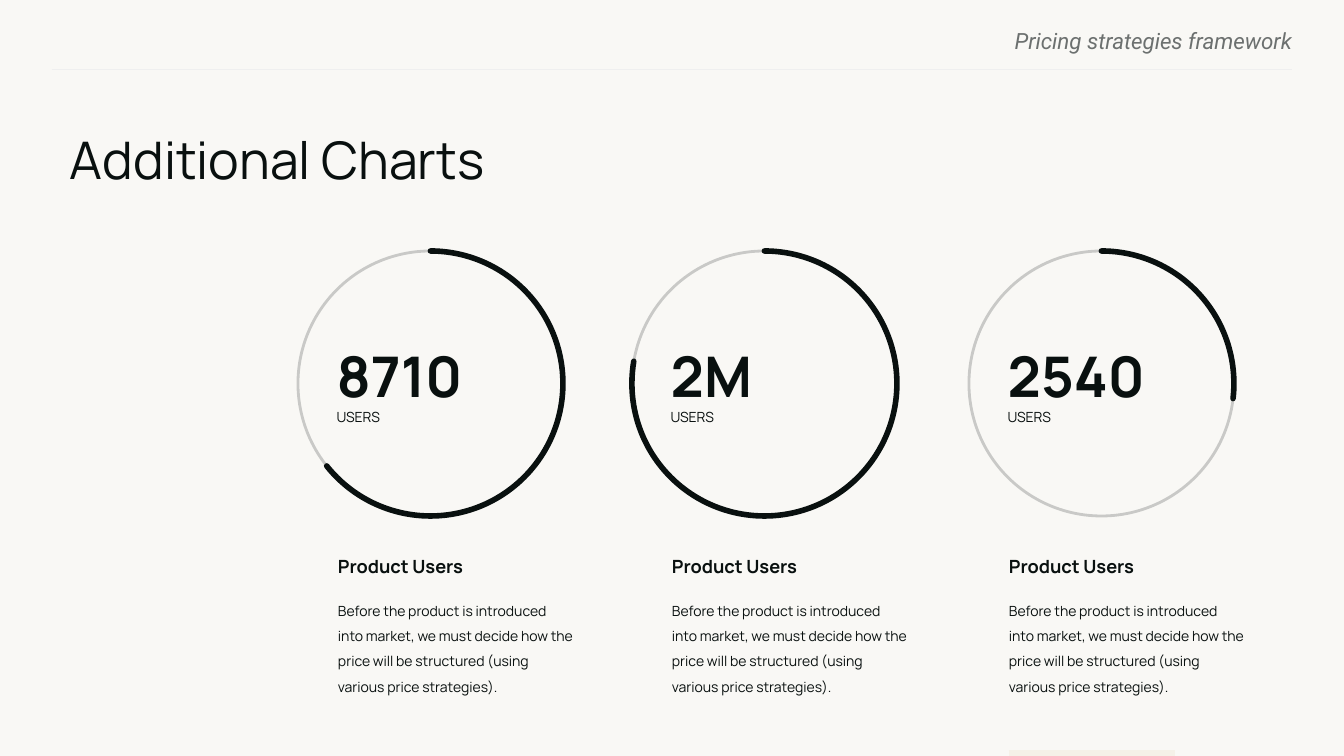
from dataclasses import dataclass

from lxml.etree import SubElement
from pptx import Presentation
from pptx.dml.color import RGBColor
from pptx.enum.shapes import MSO_CONNECTOR, MSO_SHAPE
from pptx.enum.text import MSO_ANCHOR, PP_ALIGN
from pptx.oxml.ns import qn
from pptx.util import Emu, Pt

SLIDE_W, SLIDE_H = 1344, 756
EMU_PER_PX = 12192000 / SLIDE_W

PAPER, INK, GREY = "F9F8F5", "09100F", "6C706F"
RULE, FOOT_MARK = "EFEFEF", "F5F1E8"

RING_TOP, RING_SIZE = 251, 265
CAPTION_INDENT, CAPTION_TOP, CAPTION_W, CAPTION_H = 40, 546, 236, 147
ARC_START = 270
INSET_Y = 5
CAPTION_TITLE = "Product Users"
CAPTION_BODY = (
    "Before the product is introduced into market, we must decide how the "
    "price will be structured (using various price strategies)."
)


@dataclass(frozen=True)
class Gauge:
    left: int
    figure: str
    arc_end: float  # degrees, clockwise from three o'clock


@dataclass(frozen=True)
class Line:
    text: str
    size: int
    bold: bool = False
    italic: bool = False
    font: str = "Manrope"
    color: str = INK
    align: PP_ALIGN = PP_ALIGN.LEFT
    spacing: float = 1.0
    before: int = 0


GAUGES = [
    Gauge(298, "8710", 141.52),
    Gauge(632, "2M", 189.65),
    Gauge(969, "2540", 6.54),
]


def px(length: int) -> Emu:
    return Emu(round(length * EMU_PER_PX))


def rgb(color: str) -> RGBColor:
    return RGBColor.from_string(color)


def write(frame, lines: list[Line], inset_x: int = 0, inset_y: int = INSET_Y) -> None:
    frame.word_wrap = True
    frame.margin_left = frame.margin_right = px(inset_x)
    frame.margin_top = frame.margin_bottom = px(inset_y)
    frame.text = "\n".join(line.text for line in lines)
    for paragraph, line in zip(frame.paragraphs, lines):
        paragraph.alignment = line.align
        paragraph.line_spacing = line.spacing
        paragraph.space_before = Pt(line.before)
        font = paragraph.runs[0].font
        font.name, font.size = line.font, Pt(line.size)
        font.bold, font.italic = line.bold, line.italic
        font.color.rgb = rgb(line.color)


def add_text(slide, left: int, top: int, width: int, height: int,
             lines: list[Line], inset_x: int = 0, inset_y: int = INSET_Y) -> None:
    box = slide.shapes.add_textbox(px(left), px(top), px(width), px(height))
    write(box.text_frame, lines, inset_x, inset_y)


def add_rule(slide, left: int, right: int, y: int, color: str, weight: float) -> None:
    rule = slide.shapes.add_connector(
        MSO_CONNECTOR.STRAIGHT, px(left), px(y), px(right), px(y))
    rule.line.color.rgb = rgb(color)
    rule.line.width = Pt(weight)
    SubElement(rule._element.spPr, qn("a:effectLst"))


def add_outline(slide, kind: MSO_SHAPE, left: int, weight: int):
    outline = slide.shapes.add_shape(
        kind, px(left), px(RING_TOP), px(RING_SIZE), px(RING_SIZE))
    outline.shadow.inherit = False
    outline.fill.background()
    outline.line.color.rgb = rgb(INK)
    outline.line.width = Pt(weight)
    return outline


def add_gauge(slide, gauge: Gauge) -> None:
    # Pale full ring holding the figure
    ring = add_outline(slide, MSO_SHAPE.OVAL, gauge.left, 2)
    ring_color = ring.line._ln.find(f".//{qn('a:srgbClr')}")
    SubElement(ring_color, qn("a:alpha"), val="20000")
    ring.text_frame.vertical_anchor = MSO_ANCHOR.MIDDLE
    write(ring.text_frame, [Line(gauge.figure, 40, bold=True), Line("USERS", 10)])

    # Progress arc with round ends; adjustments count 0.6 per degree
    arc = add_outline(slide, MSO_SHAPE.ARC, gauge.left, 4)
    arc.adjustments[0] = ARC_START * 0.6
    arc.adjustments[1] = gauge.arc_end * 0.6
    arc.line._ln.set("cap", "rnd")

    # Caption below
    add_text(slide, gauge.left + CAPTION_INDENT, CAPTION_TOP, CAPTION_W, CAPTION_H, [
        Line(CAPTION_TITLE, 13, bold=True, spacing=1.2),
        Line(CAPTION_BODY, 10, spacing=1.5, before=12),
    ])


def main() -> None:
    deck = Presentation()
    deck.slide_width, deck.slide_height = px(SLIDE_W), px(SLIDE_H)
    slide = deck.slides.add_slide(deck.slide_layouts[6])
    slide.background.fill.solid()
    slide.background.fill.fore_color.rgb = rgb(PAPER)

    # Header
    add_text(slide, 774, 27, 518, 24, [
        Line("Pricing strategies framework", 16, italic=True, font="Roboto",
             color=GREY, align=PP_ALIGN.RIGHT),
    ], inset_y=0)
    add_rule(slide, 52, 1292, 70, RULE, 0.75)

    # Title
    add_text(slide, 60, 123, 1240, 69, [Line("Additional Charts", 37)], inset_x=10)

    # Gauges
    for gauge in GAUGES:
        add_gauge(slide, gauge)

    # Mark at the foot of the last column
    add_rule(slide, 1009, 1175, 753, FOOT_MARK, 4)

    deck.save("out.pptx")


if __name__ == "__main__":
    main()
